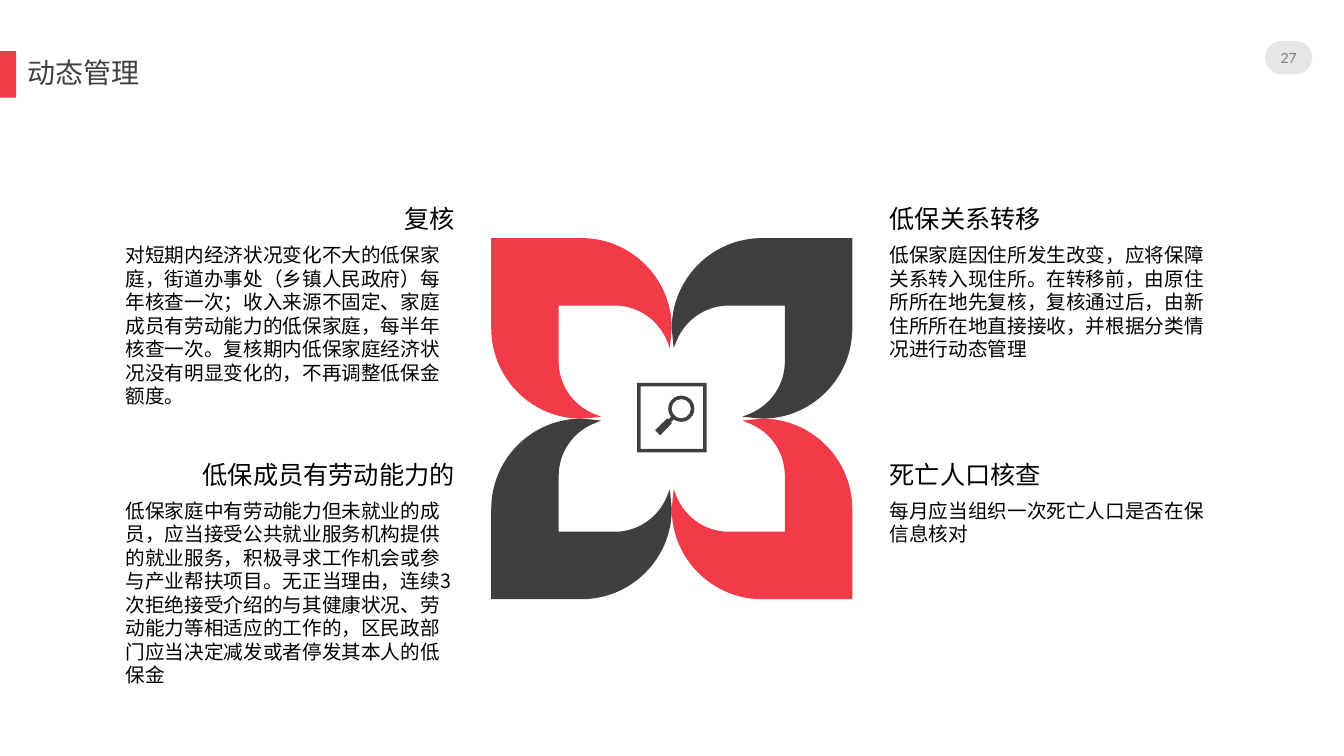
from lxml import etree
from pptx import Presentation
from pptx import util as u
from pptx.dml.color import RGBColor
from pptx.enum import shapes, text
from pptx.oxml.ns import qn

COLORS = {"red": "F23B48", "dark": "3F3F3F", "title": "404040",
          "pill": "E7E6E6", "number": "808080", "black": "000000"}
CJK, HEADING, NUMBER = "Noto Sans CJK SC", "Arial", "Lato"

# Left, top, heading, body, body height, alignment of the heading
LEFT, RIGHT, UPPER, LOWER, COLUMN_WIDTH = 2.92, 22.17, 5.0, 11.44, 8.79
SECTIONS = [
    (RIGHT, UPPER, "低保关系转移",
     "低保家庭因住所发生改变，应将保障关系转入现住所。在转移前，由原住所所在地先复核，"
     "复核通过后，由新住所所在地直接接收，并根据分类情况进行动态管理",
     3.84, text.PP_ALIGN.LEFT),
    (RIGHT, LOWER, "死亡人口核查",
     "每月应当组织一次死亡人口是否在保信息核对",
     2.06, text.PP_ALIGN.LEFT),
    (LEFT, UPPER, "复核",
     "对短期内经济状况变化不大的低保家庭，街道办事处（乡镇人民政府）每年核查一次；"
     "收入来源不固定、家庭成员有劳动能力的低保家庭，每半年核查一次。"
     "复核期内低保家庭经济状况没有明显变化的，不再调整低保金额度。",
     5.05, text.PP_ALIGN.RIGHT),
    (LEFT, LOWER, "低保成员有劳动能力的",
     "低保家庭中有劳动能力但未就业的成员，应当接受公共就业服务机构提供的就业服务，"
     "积极寻求工作机会或参与产业帮扶项目。无正当理由，连续3次拒绝接受介绍的与其健康状况、"
     "劳动能力等相适应的工作的，区民政部门应当决定减发或者停发其本人的低保金",
     5.64, text.PP_ALIGN.RIGHT),
]

# Half a petal, measured outwards from the centre of the flower
HALF_PETAL = [(2.28, 4.55), (1.02, 4.55), (0, 3.53), (0, 2.28),
              (0.02, 2.05), (0.05, 1.78), (0.13, 1.98),
              (0.35, 2.5), (0.86, 2.85), (1.44, 2.85)]
PETAL = ([(4.55, 4.55)] + HALF_PETAL + [(2.85, 2.85)]
         + [(y, x) for x, y in reversed(HALF_PETAL)])
PETAL_CURVES = (2, 8, 13, 19)  # first control point of each curve


def box(left, top, width, height):
    return [u.Cm(value) for value in (left, top, width, height)]


def paint(shape, color):
    shape.shadow.inherit = False
    shape.fill.solid()
    shape.fill.fore_color.rgb = RGBColor.from_string(COLORS[color])
    shape.line.fill.background()


def write(shape, content, size, font, color, align, anchor=text.MSO_ANCHOR.TOP):
    frame = shape.text_frame
    frame.word_wrap = True
    frame.vertical_anchor = anchor
    paragraph = frame.paragraphs[0]
    paragraph.alignment = align
    run = paragraph.add_run()
    run.text = content
    run.font.size = u.Pt(size)
    run.font.name = font
    run.font.color.rgb = RGBColor.from_string(COLORS[color])
    # East Asian typeface
    latin = run.font._element.find(qn("a:latin"))
    latin.addnext(etree.Element(qn("a:ea"), typeface=font))
    return paragraph


def clear_margins(shape):
    frame = shape.text_frame
    frame.margin_left = frame.margin_right = 0
    frame.margin_top = frame.margin_bottom = 0


def add_preset(slide, kind, left, top, width, height, color):
    shape = slide.shapes.add_shape(kind, *box(left, top, width, height))
    paint(shape, color)
    return shape


def add_outline(slide, points, color, curves=()):
    corners = [(u.Cm(x), u.Cm(y)) for x, y in points]
    builder = slide.shapes.build_freeform(*corners[0])
    builder.add_line_segments(corners[1:], close=True)
    shape = builder.convert_to_shape()
    paint(shape, color)
    # Merge three line segments into each Bézier curve
    segments = list(shape._element.iter(qn("a:lnTo")))
    for first in curves:
        curve = etree.Element(qn("a:cubicBezTo"))
        segments[first - 1].addprevious(curve)
        for segment in segments[first - 1:first + 2]:
            curve.append(segment[0])
            segment.getparent().remove(segment)


def add_header(slide, left, top, width, height):
    # Accent bar and title
    add_preset(slide, shapes.MSO_SHAPE.RECTANGLE, left, top, 0.41, height, "red")
    title = slide.shapes.title
    title.left, title.top, title.width, title.height = box(
        left + 0.7, top, width - 0.7, height)
    clear_margins(title)
    paragraph = write(title, "动态管理", 20, CJK, "title",
                      text.PP_ALIGN.LEFT, text.MSO_ANCHOR.MIDDLE)
    paragraph.line_spacing = 0.9
    paragraph.space_before = u.Pt(10)


def add_page_number(slide, left, top, width, height):
    pill = add_preset(slide, shapes.MSO_SHAPE.ROUNDED_RECTANGLE,
                      left, top, width, height, "pill")
    pill.adjustments[0] = 0.5
    clear_margins(pill)
    write(pill, "27", 10, NUMBER, "number",
          text.PP_ALIGN.CENTER, text.MSO_ANCHOR.MIDDLE)


def add_flower(slide, left, top, size):
    # One petal, mirrored into four quadrants
    center_x, center_y = left + size / 2, top + size / 2
    for sign_x, sign_y in ((-1, -1), (1, -1), (-1, 1), (1, 1)):
        color = "red" if sign_x == sign_y else "dark"
        points = [(center_x + sign_x * x, center_y + sign_y * y) for x, y in PETAL]
        add_outline(slide, points, color, PETAL_CURVES)


def add_search_icon(slide, left, top, size):
    # Square frame, lens and handle
    frame = add_preset(slide, shapes.MSO_SHAPE.FRAME, left, top, size, size, "dark")
    frame.adjustments[0] = 0.05
    lens = add_preset(slide, shapes.MSO_SHAPE.DONUT,
                      left + 0.78, top + 0.32, 0.66, 0.66, "dark")
    lens.adjustments[0] = 0.13
    handle = [(0.58, 1.32), (0.45, 1.19), (0.76, 0.89), (0.79, 0.92),
              (0.88, 0.83), (0.94, 0.9), (0.85, 0.99), (0.87, 1.02)]
    add_outline(slide, [(left + x, top + y) for x, y in handle], "dark")


def add_section(slide, left, top, width, heading, body, body_height, align):
    heading_box = slide.shapes.add_textbox(*box(left, top, width, 1.02))
    write(heading_box, heading, 18, HEADING, "black", align)
    body_box = slide.shapes.add_textbox(*box(left, top + 1.0, width, body_height))
    write(body_box, body, 14, CJK, "black", text.PP_ALIGN.LEFT)


def main():
    presentation = Presentation()
    presentation.slide_width, presentation.slide_height = u.Cm(33.87), u.Cm(19.05)
    slide = presentation.slides.add_slide(presentation.slide_layouts[5])
    add_header(slide, 0, 1.29, 11.3, 1.17)
    add_page_number(slide, 31.88, 1.03, 1.19, 0.84)
    add_flower(slide, 12.38, 6.0, 9.1)
    for left, top, heading, body, height, align in SECTIONS:
        add_section(slide, left, top, COLUMN_WIDTH, heading, body, height, align)
    add_search_icon(slide, 16.06, 9.65, 1.75)
    presentation.save("out.pptx")


if __name__ == "__main__":
    main()
